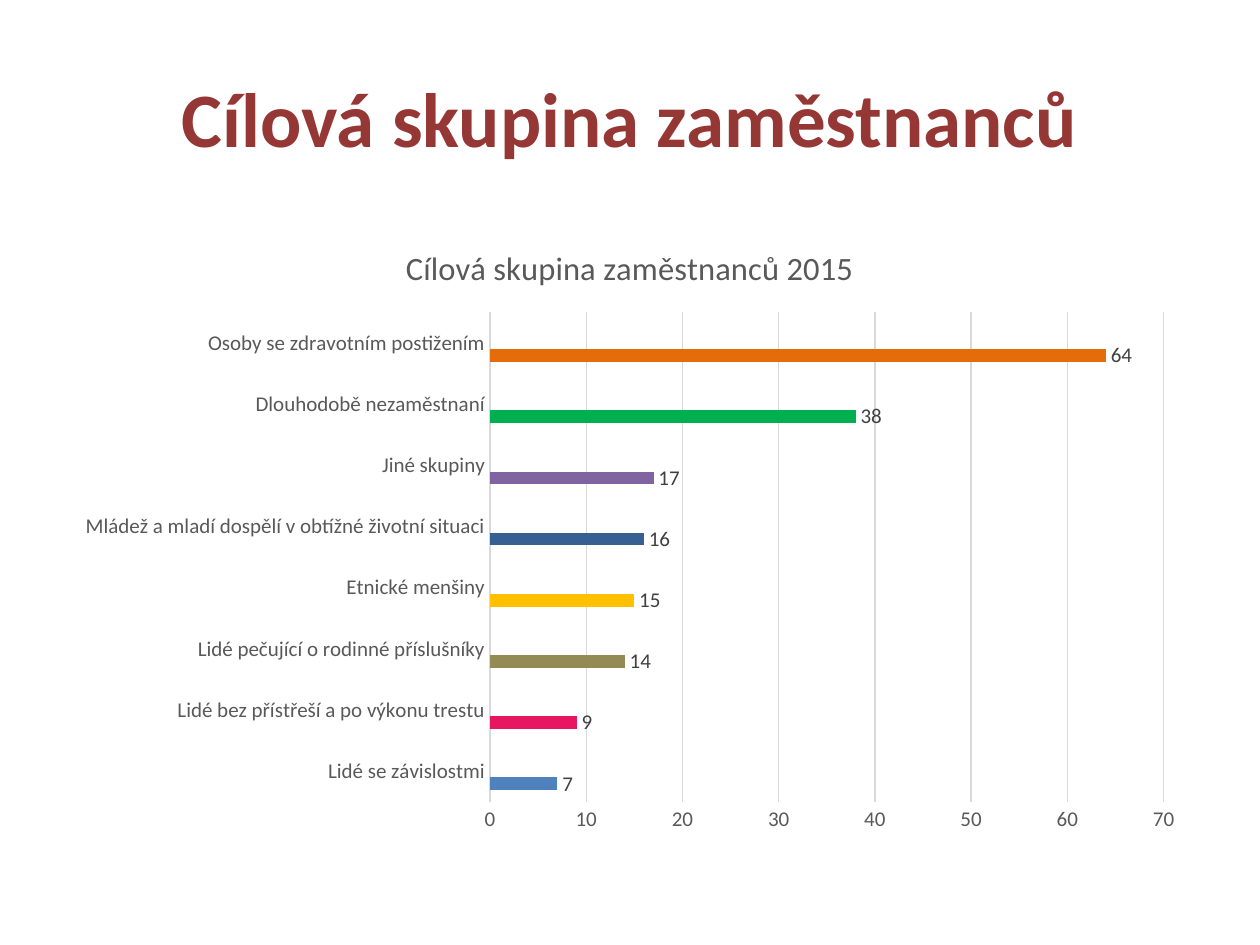
from dataclasses import dataclass

from pptx import Presentation
from pptx.chart.data import CategoryChartData
from pptx.dml.color import RGBColor
from pptx.enum.chart import XL_CHART_TYPE, XL_LABEL_POSITION, XL_TICK_MARK
from pptx.enum.text import MSO_ANCHOR, PP_ALIGN
from pptx.util import Emu, Pt

FONT = "Calibri"
HEX = {
    "title": "953735", "text": "595959", "label": "404040", "grid": "D9D9D9",
    "blue": "4F81BD", "pink": "E81661", "olive": "948A54", "gold": "FFC000",
    "navy": "376092", "purple": "8064A2", "green": "00B050", "orange": "E46C0A",
}


@dataclass(frozen=True)
class Group:
    name: str
    count: int
    color: str


GROUPS = [
    Group("Lidé se závislostmi", 7, "blue"),
    Group("Lidé bez přístřeší a po výkonu trestu", 9, "pink"),
    Group("Lidé pečující o rodinné příslušníky", 14, "olive"),
    Group("Etnické menšiny", 15, "gold"),
    Group("Mládež a mladí dospělí v obtížné životní situaci", 16, "navy"),
    Group("Jiné skupiny", 17, "purple"),
    Group("Dlouhodobě nezaměstnaní", 38, "green"),
    Group("Osoby se zdravotním postižením", 64, "orange"),
]


def px(n: int) -> Emu:
    """Turn px, 100 to the inch, into EMU."""
    return Emu(n * 9144)


def rgb(name: str) -> RGBColor:
    return RGBColor.from_string(HEX[name])


def style(font, size: float, color: str, bold: bool = False) -> None:
    font.name, font.size, font.bold = FONT, Pt(size), bold
    font.color.rgb = rgb(color)


def write(frame, text: str, *, size: float, color: str, bold: bool = False) -> None:
    para = frame.paragraphs[0]
    para.alignment = PP_ALIGN.CENTER
    run = para.add_run()
    run.text = text
    style(run.font, size, color, bold)


def rule(line) -> None:
    line.color.rgb = rgb("grid")
    line.width = Pt(0.75)


def add_title(slide) -> None:
    frame = slide.shapes.add_textbox(px(50), px(30), px(900), px(125)).text_frame
    frame.word_wrap = True
    frame.vertical_anchor = MSO_ANCHOR.MIDDLE
    write(frame, "Cílová skupina zaměstnanců", size=44, color="title", bold=True)


def add_bars(slide) -> None:
    data = CategoryChartData()
    data.categories = [group.name for group in GROUPS]
    data.add_series("Series 1", [group.count for group in GROUPS])
    for name in ("Series 2", "Series 3"):
        data.add_series(name, [None] * len(GROUPS))
    chart = slide.shapes.add_chart(
        XL_CHART_TYPE.BAR_CLUSTERED, px(50), px(175), px(900), px(495), data
    ).chart
    chart.font.name, chart.font.size = FONT, Pt(10)
    chart.has_legend = False
    chart.has_title = True
    write(chart.chart_title.text_frame, "Cílová skupina zaměstnanců 2015",
          size=18.6, color="text")

    for axis in (chart.category_axis, chart.value_axis):
        axis.major_tick_mark = axis.minor_tick_mark = XL_TICK_MARK.NONE
        style(axis.tick_labels.font, 12, "text")
    rule(chart.category_axis.format.line)
    scale = chart.value_axis
    scale.minimum_scale, scale.maximum_scale, scale.major_unit = 0, 70, 10
    scale.format.line.fill.background()
    rule(scale.major_gridlines.format.line)

    plot = chart.plots[0]
    plot.gap_width = 182
    plot.vary_by_categories = False
    bars = plot.series[0]
    for i, group in enumerate(GROUPS):
        fill = bars.points[i].format.fill
        fill.solid()
        fill.fore_color.rgb = rgb(group.color)
    labels = bars.data_labels
    labels.show_value = True
    labels.position = XL_LABEL_POSITION.OUTSIDE_END
    style(labels.font, 12, "label")


def main() -> None:
    deck = Presentation()
    deck.slide_width, deck.slide_height = px(1000), px(750)
    slide = deck.slides.add_slide(deck.slide_layouts[6])
    add_title(slide)
    add_bars(slide)
    deck.save("out.pptx")


if __name__ == "__main__":
    main()
